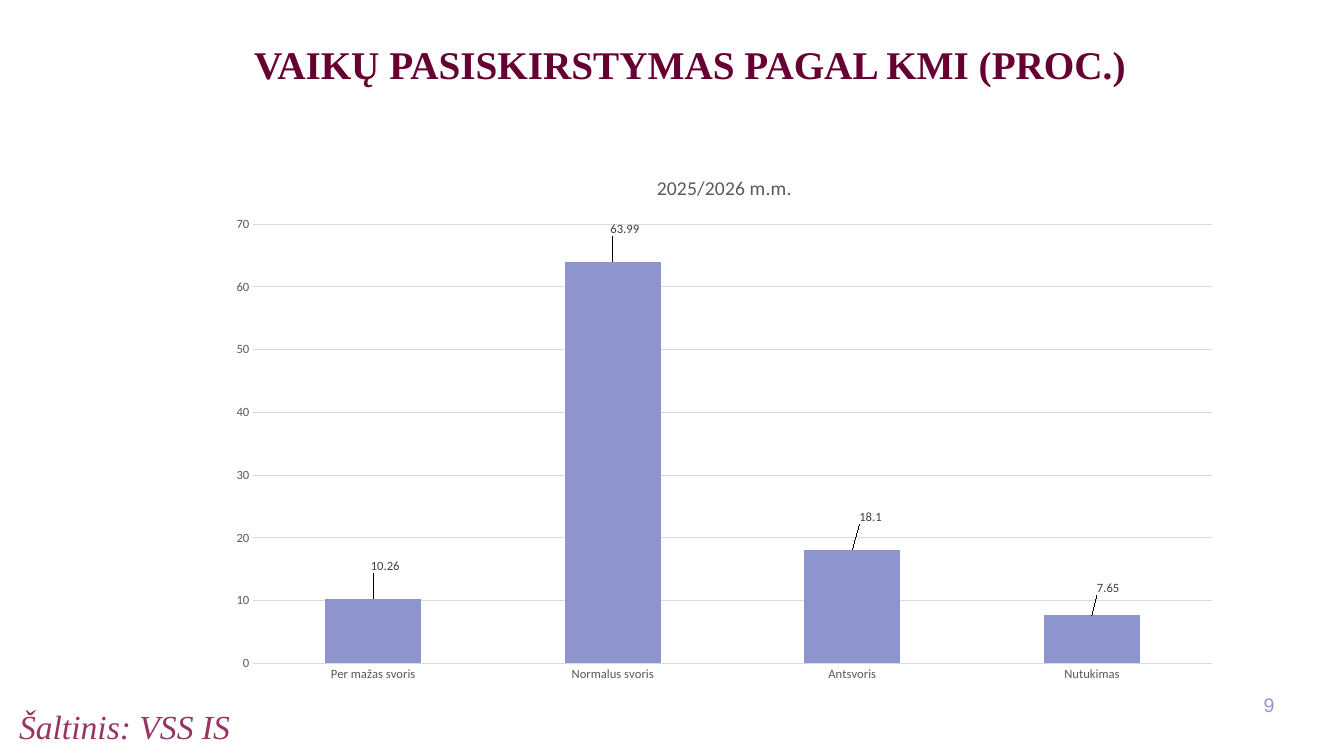
from dataclasses import dataclass

from lxml import etree
from pptx import Presentation, util as u
from pptx.chart.data import CategoryChartData
from pptx.dml.color import RGBColor
from pptx.enum import chart as ch, text as t
from pptx.oxml import ns


@dataclass(frozen=True)
class Font:
    name: str
    size: int
    color: str
    bold: bool = False
    italic: bool = False


@dataclass(frozen=True)
class Theme:
    title: Font = Font("Times New Roman", 28, "660033", bold=True)
    source: Font = Font("Times New Roman", 24, "993366", italic=True)
    number: Font = Font("Arial", 14, "8E96CD")
    chart: Font = Font("Calibri", 10, "000000")
    chart_title: Font = Font("Calibri", 14, "595959")
    axis: Font = Font("Calibri", 9, "595959")
    label: Font = Font("Calibri", 9, "404040")
    bar: str = "8D95CC"
    grid: str = "D9D9D9"


@dataclass(frozen=True)
class Box:
    """Left, top, width and height as percentages of the slide's size."""
    x: float
    y: float
    w: float
    h: float

    def emu(self, prs) -> list[int]:
        sides = (prs.slide_width, prs.slide_height) * 2
        return [u.Emu(int(side * share / 100)) for side, share
                in zip(sides, (self.x, self.y, self.w, self.h))]


@dataclass(frozen=True)
class Bar:
    """A category, its value and its label's shift as shares of the chart."""
    name: str
    value: float
    dx: float
    dy: float


THEME = Theme()
TITLE = Box(8.18, 5.33, 86.27, 15.07)
CHART = Box(16.13, 20.4, 75.54, 71.2)
SOURCE = Box(0.68, 92.67, 47.26, 5.07)
NUMBER = Box(91.67, 90.53, 3.9, 5.33)
PLOT = {"x": 0.036, "y": 0.13, "w": 0.944, "h": 0.816}
YEAR = "2025/2026 m.m."
BARS = [
    Bar("Per mažas svoris", 10.26, 0.012, -0.04),
    Bar("Normalus svoris", 63.99, 0.012, -0.04),
    Bar("Antsvoris", 18.1, 0.018, -0.04),
    Bar("Nutukimas", 7.65, 0.016, -0.03),
]


def set_all(target, values: dict) -> None:
    for name, value in values.items():
        setattr(target, name, value)


def set_font(font, style: Font) -> None:
    set_all(font, {"name": style.name, "size": u.Pt(style.size),
                   "bold": style.bold, "italic": style.italic})
    font.color.rgb = RGBColor.from_string(style.color)


def write(sp, text: str, style: Font, align, anchor=t.MSO_ANCHOR.TOP):
    tf = sp.text_frame
    set_all(tf, {"word_wrap": True, "auto_size": t.MSO_AUTO_SIZE.NONE,
                 "vertical_anchor": anchor})
    p = tf.paragraphs[0]
    p.alignment = align
    r = p.add_run()
    r.text = text
    set_font(r.font, style)
    return p


def manual_layout(values: dict, inner: bool = False):
    layout = etree.Element(ns.qn("c:layout"))
    manual = etree.SubElement(layout, ns.qn("c:manualLayout"))
    if inner:
        values = {"layoutTarget": "inner", "xMode": "edge", "yMode": "edge", **values}
    for name, value in values.items():
        etree.SubElement(manual, ns.qn(f"c:{name}"), val=str(value))
    return layout


def style_axes(chart) -> None:
    for axis in (chart.category_axis, chart.value_axis):
        set_all(axis, {"major_tick_mark": ch.XL_TICK_MARK.NONE,
                       "minor_tick_mark": ch.XL_TICK_MARK.NONE})
        axis.format.line.fill.background()
        set_font(axis.tick_labels.font, THEME.axis)
    set_all(chart.value_axis, {"minimum_scale": 0, "maximum_scale": 70,
                               "major_unit": 10, "has_major_gridlines": True})
    line = chart.value_axis.major_gridlines.format.line
    line.width = u.Pt(0.75)
    line.color.rgb = RGBColor.from_string(THEME.grid)


def style_bars(plot) -> None:
    set_all(plot, {"gap_width": 150, "vary_by_categories": False})
    series = plot.series[0]
    series.invert_if_negative = False
    series.format.fill.solid()
    series.format.fill.fore_color.rgb = RGBColor.from_string(THEME.bar)
    series.data_labels.show_value = True
    set_font(series.data_labels.font, THEME.label)
    for i in range(len(BARS)):
        label = series.points[i].data_label
        label.position = ch.XL_LABEL_POSITION.OUTSIDE_END
        set_font(label.font, THEME.label)


def place_parts(chart) -> None:
    """Fix the plot area and shift each value label from its bar."""
    area = chart.element.find(".//" + ns.qn("c:plotArea"))
    old = area.find(ns.qn("c:layout"))
    if old is not None:
        area.remove(old)
    area.insert(0, manual_layout(PLOT, inner=True))
    for bar, label in zip(BARS, area.iter(ns.qn("c:dLbl"))):
        label.insert(1, manual_layout({"x": bar.dx, "y": bar.dy}))


def add_bmi_chart(prs, s) -> None:
    data = CategoryChartData()
    data.categories = [bar.name for bar in BARS]
    data.add_series(YEAR, [bar.value for bar in BARS])
    chart = s.shapes.add_chart(ch.XL_CHART_TYPE.COLUMN_CLUSTERED,
                               *CHART.emu(prs), data).chart
    set_all(chart, {"has_legend": False, "has_title": True})
    set_font(chart.font, THEME.chart)
    title = chart.chart_title
    title.include_in_layout = False
    r = title.text_frame.paragraphs[0].add_run()
    r.text = YEAR
    set_font(r.font, THEME.chart_title)
    style_axes(chart)
    style_bars(chart.plots[0])
    place_parts(chart)


def main() -> None:
    prs = Presentation()
    set_all(prs, {"slide_width": u.Inches(13.33), "slide_height": u.Inches(7.5)})
    s = prs.slides.add_slide(prs.slide_layouts[5])

    title = s.shapes.title
    set_all(title, dict(zip(("left", "top", "width", "height"), TITLE.emu(prs))))
    p = write(title, "VAIKŲ PASISKIRSTYMAS PAGAL KMI (PROC.)", THEME.title,
              t.PP_ALIGN.CENTER)
    p.line_spacing = 0.9

    write(s.shapes.add_textbox(*SOURCE.emu(prs)), "Šaltinis: VSS IS",
          THEME.source, t.PP_ALIGN.LEFT)
    write(s.shapes.add_textbox(*NUMBER.emu(prs)), "9", THEME.number,
          t.PP_ALIGN.RIGHT, t.MSO_ANCHOR.MIDDLE)
    add_bmi_chart(prs, s)
    prs.save("out.pptx")


if __name__ == "__main__":
    main()
